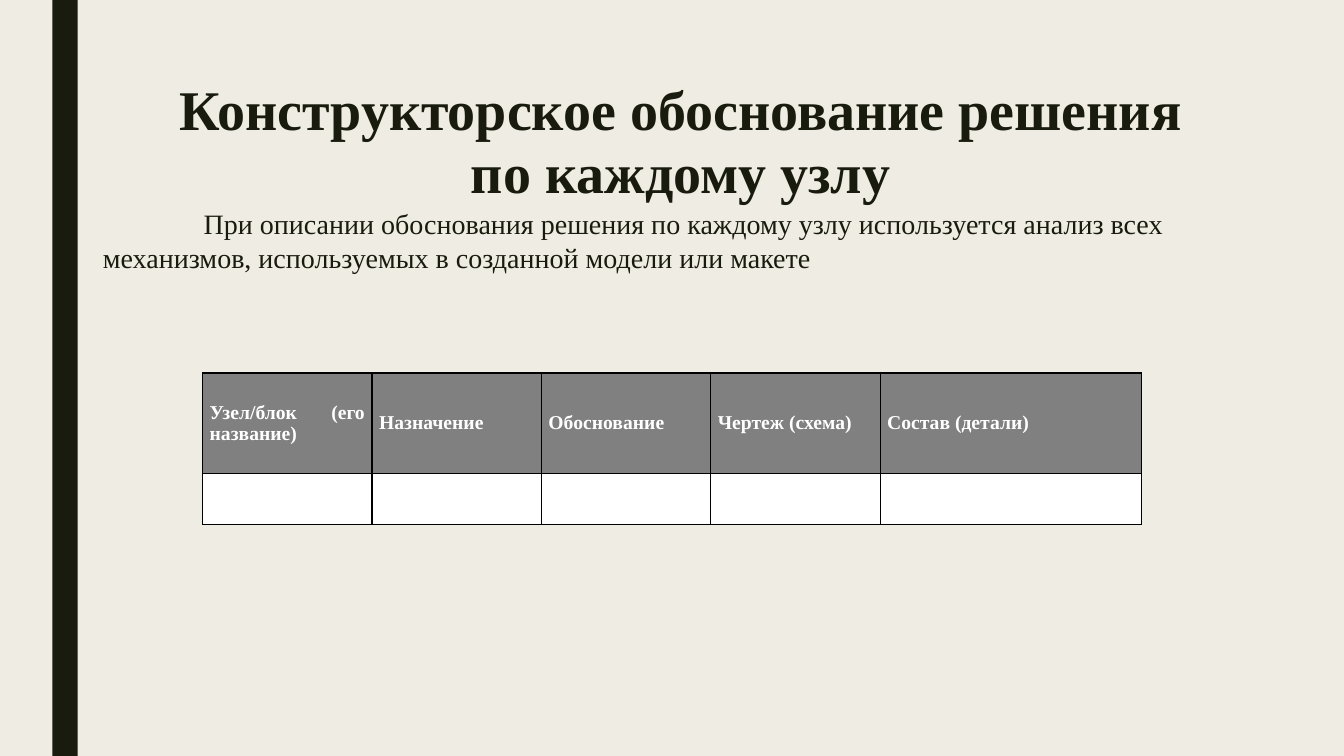
import pptx
import pptx.dml.color
import pptx.enum.shapes
import pptx.enum.text
import pptx.oxml
import pptx.util
from pptx.util import Inches

FONT = "Times New Roman"
DARK = "191B0E"
ALIGN = pptx.enum.text.PP_ALIGN
ANCHOR = pptx.enum.text.MSO_ANCHOR
HEADS = ["Узел/блок (его название)", "Назначение", "Обоснование",
         "Чертеж (схема)", "Состав (детали)"]
WIDTHS = [1.68] * 4 + [2.59]
NS = 'xmlns:a="http://schemas.openxmlformats.org/drawingml/2006/main"'


def color(code):
    return pptx.dml.color.RGBColor.from_string(code)


def paint(fill, code):
    fill.solid()
    fill.fore_color.rgb = color(code)


def write(frame, text, size=20, code=DARK, bold=False, align=ALIGN.LEFT,
          lead=1.0, before=0, after=0):
    para = frame.paragraphs[0]
    para.alignment = align
    para.line_spacing = lead
    para.space_before = pptx.util.Pt(before)
    para.space_after = pptx.util.Pt(after)
    run = para.add_run()
    run.text = text
    font = run.font
    font.name, font.size, font.bold = FONT, pptx.util.Pt(size), bold
    font.color.rgb = color(code)
    return para


def place(shape, left, top, width, height):
    shape.left, shape.top = Inches(left), Inches(top)
    shape.width, shape.height = Inches(width), Inches(height)
    frame = shape.text_frame
    frame.word_wrap = True
    frame.auto_size = pptx.enum.text.MSO_AUTO_SIZE.NONE
    frame.vertical_anchor = ANCHOR.TOP
    return frame


def indent(para, first):
    props = para._p.get_or_add_pPr()
    props.set("marL", "0")
    props.set("indent", str(Inches(first)))
    props.append(pptx.oxml.parse_xml(f"<a:buNone {NS}/>"))


def border(cell):
    props = cell._tc.get_or_add_tcPr()
    for i, side in enumerate(["lnL", "lnR", "lnT", "lnB"]):
        props.insert(i, pptx.oxml.parse_xml(
            f'<a:{side} {NS} w="12700"><a:solidFill>'
            f'<a:srgbClr val="000000"/></a:solidFill></a:{side}>'))


def add_bar(slide):
    bar = slide.shapes.add_shape(
        pptx.enum.shapes.MSO_SHAPE.RECTANGLE,
        Inches(0.52), 0, Inches(0.25), Inches(7.5))
    bar.shadow.inherit = False
    paint(bar.fill, DARK)
    bar.line.fill.background()


def add_grid(slide):
    grid = slide.shapes.add_table(
        2, len(HEADS), Inches(2.01), Inches(3.7),
        Inches(sum(WIDTHS)), Inches(1.5)).table
    for row, height in zip(grid.rows, [1, 0.5]):
        row.height = Inches(height)
    for i, (head, width) in enumerate(zip(HEADS, WIDTHS)):
        grid.columns[i].width = Inches(width)
        top, low = grid.cell(0, i), grid.cell(1, i)
        for cell, code in [(top, "808080"), (low, "FFFFFF")]:
            paint(cell.fill, code)
            border(cell)
        top.vertical_anchor = ANCHOR.MIDDLE
        top.margin_left = top.margin_right = Inches(0.07)
        top.margin_top = top.margin_bottom = 0
        write(top.text_frame, head, size=14, code="FFFFFF", bold=True,
              align=ALIGN.JUSTIFY)


def main():
    deck = pptx.Presentation()
    deck.slide_width, deck.slide_height = Inches(13.33), Inches(7.5)
    slide = deck.slides.add_slide(deck.slide_layouts[1])
    paint(slide.background.fill, "EFEDE3")
    add_bar(slide)
    title = place(slide.shapes.title, 1.5, 0.75, 10.5, 1.62)
    write(title, "Конструкторское обоснование решения по каждому узлу",
          size=40, bold=True, align=ALIGN.CENTER, lead=0.93)
    body = place(slide.placeholders[1], 0.92, 2, 11.5, 1.56)
    para = write(body, "При описании обоснования решения по каждому узлу "
                 "используется анализ всех механизмов, используемых "
                 "в созданной модели или макете", before=10, after=2)
    indent(para, 1)
    add_grid(slide)
    deck.save("out.pptx")


if __name__ == "__main__":
    main()
